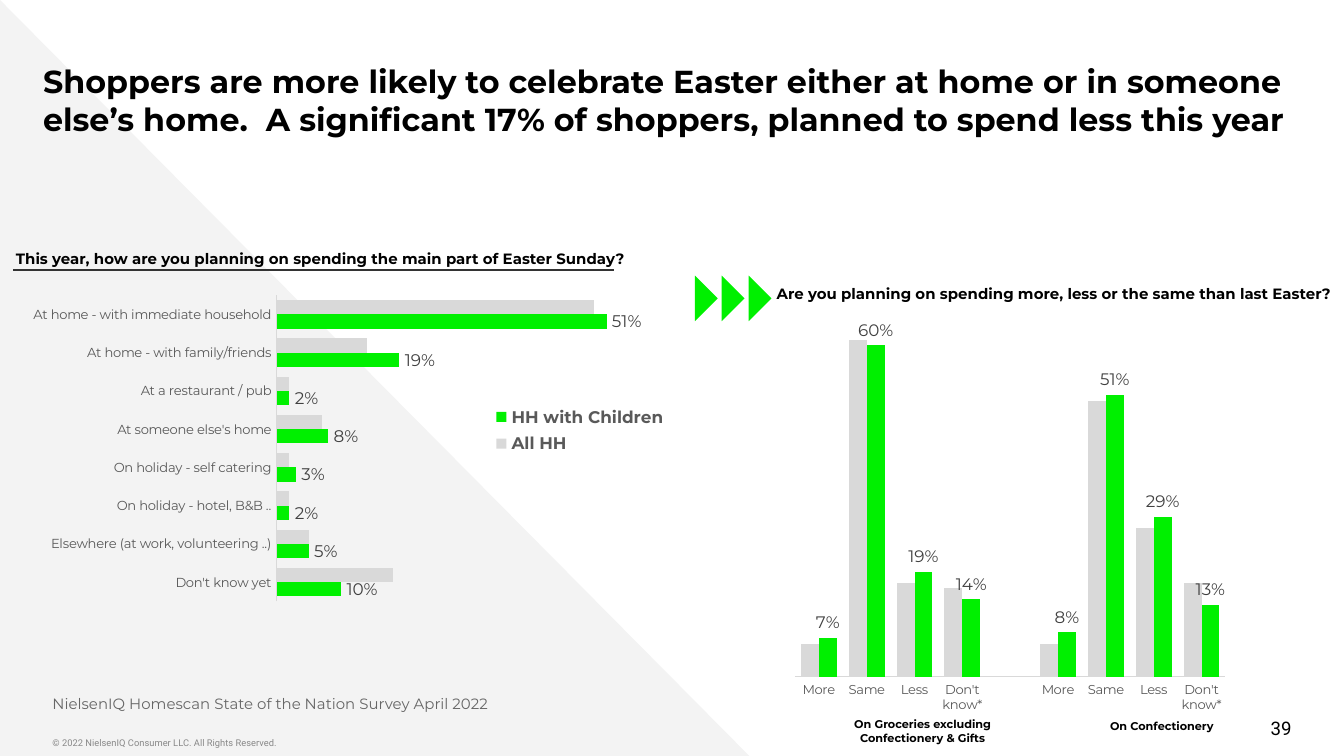
from lxml import etree
from pptx import Presentation
from pptx.chart.data import CategoryChartData
from pptx.dml.color import RGBColor
from pptx.enum import chart as ch, shapes, text
from pptx.oxml import ns
from pptx.util import Inches, Pt

COLORS = {"green": "00F000", "grey": "D9D9D9", "pale": "F3F3F3", "black": "000000",
          "rule": "333333", "axis": "595959", "label": "404040",
          "source": "666666", "footer": "888888"}
LEFT, CENTER, RIGHT = text.PP_ALIGN.LEFT, text.PP_ALIGN.CENTER, text.PP_ALIGN.RIGHT
TOP, MIDDLE, BOTTOM = text.MSO_ANCHOR.TOP, text.MSO_ANCHOR.MIDDLE, text.MSO_ANCHOR.BOTTOM


def rgb(name):
    """Return the palette colour of that name."""
    return RGBColor.from_string(COLORS[name])


def style_font(font, size, color, bold=False, name="Montserrat"):
    """Set size, colour, weight and typeface of a font."""
    font.size, font.bold, font.name = Pt(size), bold, name
    font.color.rgb = rgb(color)


def fill_frame(tf, words, size, color="black", bold=False, name="Montserrat",
               align=LEFT, anchor=TOP, insets=(0.1, 0.05), wrap=True):
    """Write one styled run into a text frame."""
    tf.word_wrap, tf.auto_size = wrap, text.MSO_AUTO_SIZE.NONE
    tf.vertical_anchor = anchor
    tf.margin_left = tf.margin_right = Inches(insets[0])
    tf.margin_top = tf.margin_bottom = Inches(insets[1])
    p = tf.paragraphs[0]
    p.alignment = align
    r = p.add_run()
    r.text = words
    style_font(r.font, size, color, bold, name)


def add_text(s, box, words, size, **style):
    """Add a text box at the given box."""
    sp = s.shapes.add_textbox(*map(Inches, box))
    fill_frame(sp.text_frame, words, size, **style)


def add_triangle(s, box, color, rotation=0):
    """Add a plain right triangle and return it."""
    sp = s.shapes.add_shape(shapes.MSO_SHAPE.RIGHT_TRIANGLE, *map(Inches, box))
    sp.shadow.inherit = False
    sp.fill.solid()
    sp.fill.fore_color.rgb = rgb(color)
    sp.line.fill.background()
    sp.rotation = rotation
    return sp


def add_layout(parent, index, box, inner=False):
    """Give a chart part a manual position in fractions of the chart."""
    for old in parent.findall(ns.qn("c:layout")):
        parent.remove(old)
    layout = etree.Element(ns.qn("c:layout"))
    manual = etree.SubElement(layout, ns.qn("c:manualLayout"))
    settings = [("layoutTarget", "inner")] if inner else []
    settings += [("xMode", "edge"), ("yMode", "edge"), *zip("xywh", box)]
    for tag, value in settings:
        etree.SubElement(manual, ns.qn("c:" + tag)).set("val", str(value))
    parent.insert(index, layout)


def add_bar_chart(s, box, kind, cats, series, maximum, plot_box):
    """Add a two-series percentage chart with labels on the second series."""
    data = CategoryChartData(number_format="0%")
    data.categories = cats
    for name, values in series:
        data.add_series(name, values)
    chart = s.shapes.add_chart(kind, *map(Inches, box), data).chart
    style_font(chart.font, 10, "black", name="Arial")
    chart.has_title = chart.has_legend = False
    cat, val = chart.category_axis, chart.value_axis
    cat.major_tick_mark = cat.minor_tick_mark = ch.XL_TICK_MARK.NONE
    cat.has_major_gridlines = val.has_major_gridlines = False
    style_font(cat.tick_labels.font, 7, "axis")
    cat.format.line.color.rgb = rgb("grey")
    cat.format.line.width = Pt(0.75)
    val.minimum_scale, val.maximum_scale, val.visible = 0, maximum, False
    plot = chart.plots[0]
    plot.gap_width, plot.overlap, plot.vary_by_categories = 67, 0, False
    for ser, color in zip(plot.series, ("grey", "green")):
        ser.format.fill.solid()
        ser.format.fill.fore_color.rgb = rgb(color)
        ser.invert_if_negative = False
    labels = plot.series[1].data_labels
    labels.show_value = True
    labels.number_format, labels.number_format_is_linked = "0%", False
    labels.position = ch.XL_LABEL_POSITION.OUTSIDE_END
    style_font(labels.font, 9, "label")
    add_layout(chart._chartSpace.chart.plotArea, 0, plot_box, inner=True)
    return chart


def add_frame(s, w, h):
    """Place the background triangle, title, source and footer."""
    backdrop = add_triangle(s, (0, 0, 5.59, 5.64), "pale")
    title = s.shapes.title
    title._element.addprevious(backdrop._element)
    title.left, title.top, title.width, title.height = map(Inches, (0.32, 0.36, 9.9, 0.43))
    fill_frame(title.text_frame, "Shoppers are more likely to celebrate Easter either at home "
               "or in someone else’s home.  A significant 17% of shoppers, planned to spend "
               "less this year", 17, bold=True, insets=(0, 0.1))
    add_text(s, (0.39, h - 0.19, 5.54, 0.2),
             "© 2022 NielsenIQ Consumer LLC. All Rights Reserved.", 5,
             color="footer", name="Roboto", insets=(0, 0.05))
    add_text(s, (w - 2.64, h - 0.36, 2.25, 0.3), "39", 10, name="Roboto",
             align=RIGHT, anchor=MIDDLE, insets=(0, 0.05))
    add_text(s, (0.39, h - 0.56, 6.07, 0.34),
             "NielsenIQ Homescan State of the Nation Survey April 2022", 8,
             color="source", anchor=BOTTOM, insets=(0, 0.1))


def add_location_panel(s, x, y):
    """Place the question on where Easter Sunday is spent and its chart."""
    add_text(s, (x, y, 4.78, 0.24), "This year, how are you planning on spending the main "
             "part of Easter Sunday?", 8, bold=True, wrap=False)
    rule = s.shapes.add_connector(shapes.MSO_CONNECTOR.STRAIGHT, Inches(x + 0.08),
                                  Inches(y + 0.2), Inches(x + 4.55), Inches(y + 0.2))
    rule.line.color.rgb, rule.line.width = rgb("rule"), Pt(0.75)
    etree.SubElement(rule._element.spPr, ns.qn("a:effectLst"))
    cats = ["At home - with immediate household", "At home - with family/friends",
            "At a restaurant / pub", "At someone else's home", "On holiday - self catering",
            "On holiday - hotel, B&B ..", "Elsewhere (at work, volunteering ..)",
            "Don't know yet"]
    series = [("All HH", (0.49, 0.14, 0.02, 0.07, 0.02, 0.02, 0.05, 0.18)),
              ("HH with Children", (0.51, 0.19, 0.02, 0.08, 0.03, 0.02, 0.05, 0.1))]
    chart = add_bar_chart(s, (x + 0.01, y + 0.24, 5.07, 2.45), ch.XL_CHART_TYPE.BAR_CLUSTERED,
                          cats, series, 0.6, (0.4, 0.06, 0.57, 0.93))
    chart.category_axis.reverse_order = True
    chart.has_legend = True
    legend = chart.legend
    legend.position, legend.include_in_layout = ch.XL_LEGEND_POSITION.BOTTOM, False
    style_font(legend.font, 9, "axis", bold=True)
    add_layout(legend._element, 1, (0.71, 0.38, 0.27, 0.18))


def add_spend_panel(s, x, y):
    """Place the arrows, the spending question, its chart and group captions."""
    for i in range(3):
        add_triangle(s, (x + 0.2 * i, y + 0.03, 0.24, 0.24), "green", 225)
    add_text(s, (x + 0.63, y, 5, 0.24), "Are you planning on spending more, less or the "
             "same than last Easter?", 8, bold=True)
    answers = ["More", "Same", "Less", "Don't know*"]
    series = [("Series 1", (0.06, 0.61, 0.17, 0.16, None, 0.06, 0.5, 0.27, 0.17)),
              ("Series 2", (0.07, 0.6, 0.19, 0.14, None, 0.08, 0.51, 0.29, 0.13))]
    add_bar_chart(s, (x + 0.86, y + 0.09, 3.45, 3.14), ch.XL_CHART_TYPE.COLUMN_CLUSTERED,
                  answers + [""] + answers, series, 0.7, (0, 0, 0.93, 0.93))
    captions = ((1, 3.22, "On Groceries excluding Confectionery & Gifts"),
                (2.78, 3.23, "On Confectionery"))
    for dx, dy, words in captions:
        add_text(s, (x + dx, y + dy, 1.63, 0.3), words, 6, bold=True, align=CENTER)


def main():
    """Build the slide and save it."""
    prs = Presentation()
    w = 10
    h = w * 9 / 16
    prs.slide_width, prs.slide_height = Inches(w), Inches(h)
    s = prs.slides.add_slide(prs.slide_layouts[5])
    add_frame(s, w, h)
    add_location_panel(s, 0.02, 1.81)
    add_spend_panel(s, 5.05, 2.07)
    prs.save("out.pptx")


if __name__ == "__main__":
    main()
